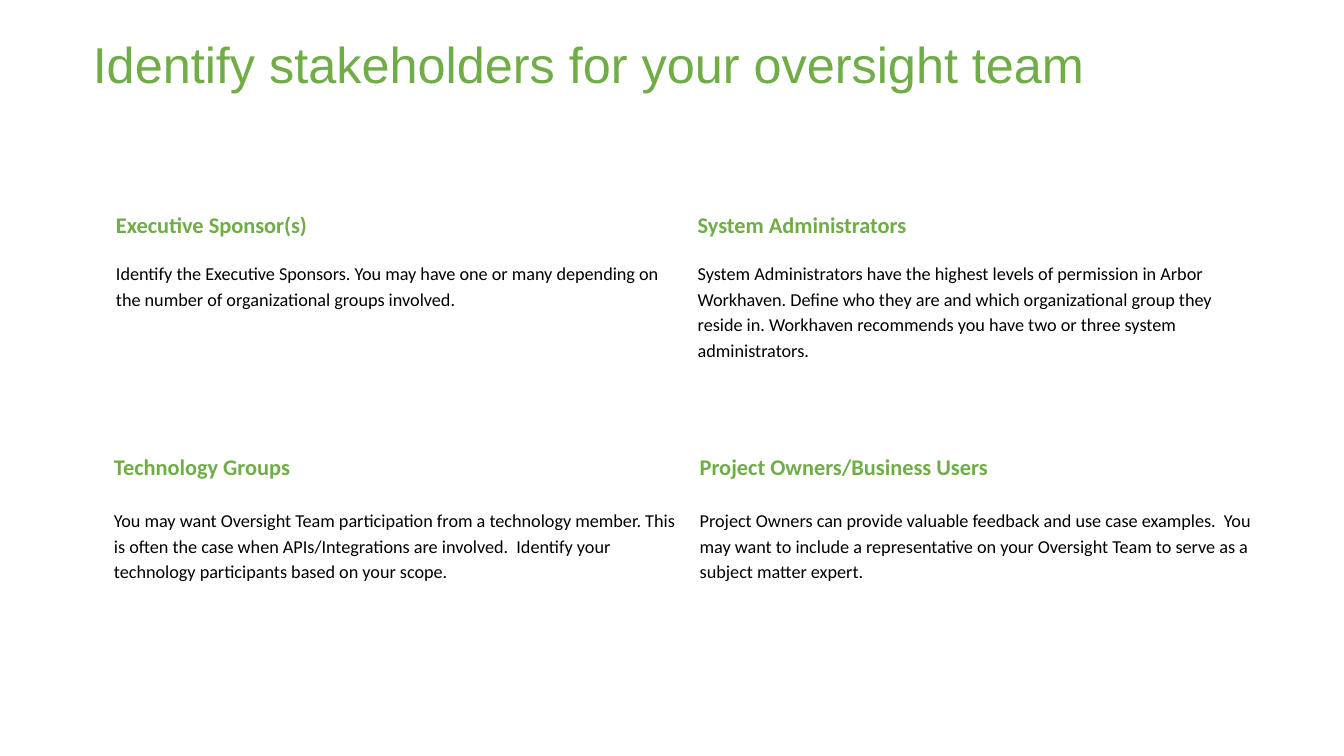
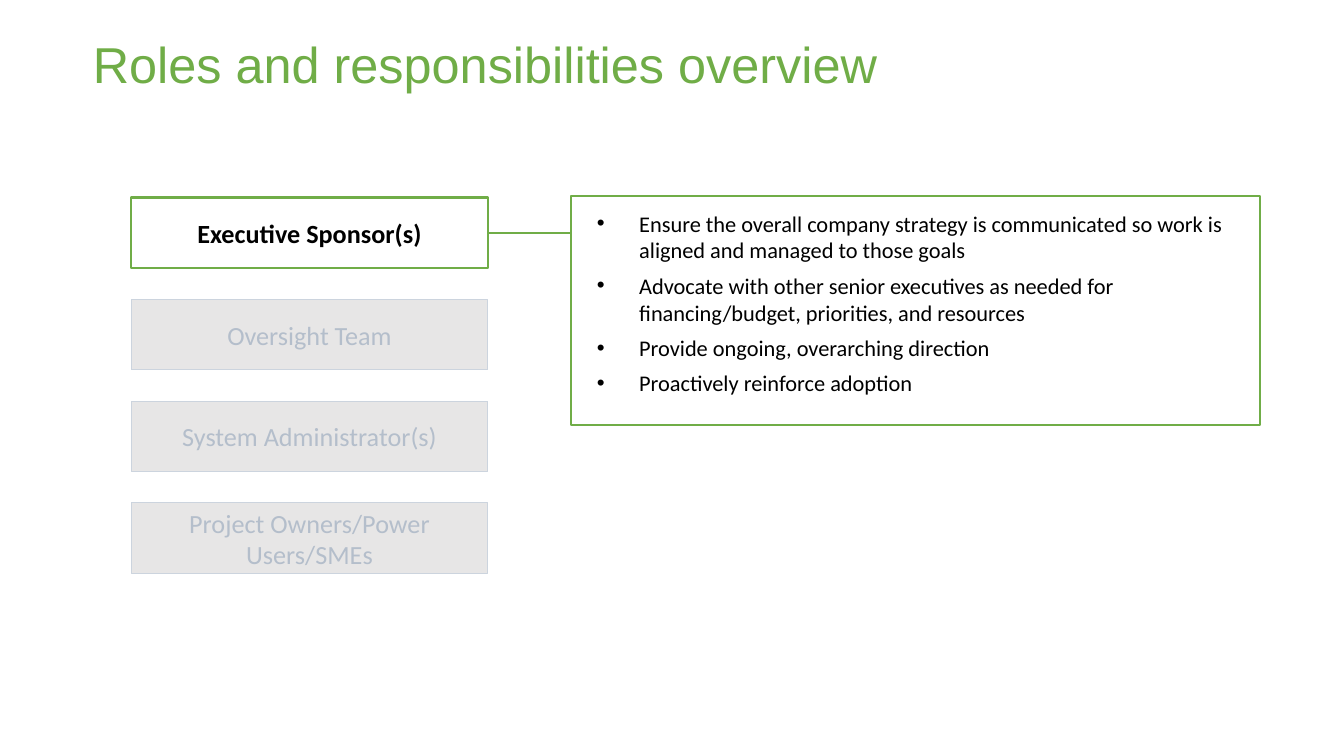
from dataclasses import dataclass

from lxml import etree
from pptx import Presentation
from pptx.dml.color import RGBColor
from pptx.enum.shapes import MSO_CONNECTOR, MSO_SHAPE
from pptx.enum.text import MSO_ANCHOR, MSO_AUTO_SIZE, PP_ALIGN
from pptx.oxml.ns import qn
from pptx.util import Inches, Pt

RECT = MSO_SHAPE.RECTANGLE
LINE = MSO_CONNECTOR.STRAIGHT
TOP, MIDDLE = MSO_ANCHOR.TOP, MSO_ANCHOR.MIDDLE
LEFT, CENTER = PP_ALIGN.LEFT, PP_ALIGN.CENTER
FIXED = MSO_AUTO_SIZE.NONE


@dataclass(frozen=True)
class Theme:
    green: RGBColor = RGBColor.from_string("70AD47")
    black: RGBColor = RGBColor.from_string("000000")
    white: RGBColor = RGBColor.from_string("FFFFFF")
    gray: RGBColor = RGBColor.from_string("E7E6E6")
    edge: RGBColor = RGBColor.from_string("CCD4DE")
    mute: RGBColor = RGBColor.from_string("B4BECB")
    head: str = "Arial"
    body: str = "Calibri"
    title: Pt = Pt(36)
    role: Pt = Pt(18.7)
    label: Pt = Pt(16)
    text: Pt = Pt(13)
    bold: Pt = Pt(1.5)
    thin: Pt = Pt(0.75)


theme = Theme()


def style(para, face, size, color, bold=False):
    para.font.name = face
    para.font.size = size
    para.font.color.rgb = color
    para.font.bold = bold


def start(layout, text):
    slide = deck.slides.add_slide(deck.slide_layouts[layout])
    title = slide.shapes.title
    title.left, title.top = Inches(0.92), Inches(0.4)
    title.width, title.height = Inches(11.5), Inches(1.45)
    frame = title.text_frame
    frame.text = text
    frame.auto_size = FIXED
    frame.vertical_anchor = TOP
    frame.margin_left = frame.margin_right = 0
    frame.margin_top = frame.margin_bottom = 0
    para = frame.paragraphs[0]
    para.alignment = LEFT
    para.line_spacing = 0.9
    style(para, theme.head, theme.title, theme.green)
    return slide


deck = Presentation()
deck.slide_width, deck.slide_height = Inches(13.33), Inches(7.5)

slide = start(5, "Identify stakeholders for your oversight team")
tables = [
    (1.05, 2, (5.77, 5.6), (0.48, 1.77), (
        ("Executive Sponsor(s)", "System Administrators"),
        ("Identify the Executive Sponsors. You may have one or many depending "
         "on the number of organizational groups involved.",
         "System Administrators have the highest levels of permission in Arbor "
         "Workhaven. Define who they are and which organizational group they "
         "reside in. Workhaven recommends you have two or three system "
         "administrators."))),
    (1.03, 4.41, (5.81, 5.69), (0.52, 1.88), (
        ("Technology Groups", "Project Owners/Business Users"),
        ("You may want Oversight Team participation from a technology member. "
         "This is often the case when APIs/Integrations are involved.  "
         "Identify your technology participants based on your scope.",
         "Project Owners can provide valuable feedback and use case "
         "examples.  You may want to include a representative on your "
         "Oversight Team to serve as a subject matter expert."))),
]
for left, top, widths, heights, rows in tables:
    table = slide.shapes.add_table(
        2, 2, Inches(left), Inches(top),
        Inches(sum(widths)), Inches(sum(heights))).table
    table.first_row = table.horz_banding = False
    for col, width in zip(table.columns, widths):
        col.width = Inches(width)
    for r, (height, texts) in enumerate(zip(heights, rows)):
        table.rows[r].height = Inches(height)
        for c, text in enumerate(texts):
            cell = table.cell(r, c)
            cell.fill.background()
            cell.margin_left = cell.margin_top = cell.margin_bottom = Inches(0.1)
            cell.margin_right = Inches(0.13)
            cell.text = text
            para = cell.text_frame.paragraphs[0]
            if r == 0:
                style(para, theme.body, theme.label, theme.green, True)
            else:
                para.line_spacing = 1.15
                style(para, theme.body, theme.text, theme.black)

slide = start(1, "Roles and responsibilities overview")
roles = ["Executive Sponsor(s)", "Oversight Team", "System Administrator(s)",
         "Project Owners/Power Users/SMEs"]
pad = Inches(0.13)
for i, role in enumerate(roles):
    live = i == 0
    box = slide.shapes.add_shape(
        RECT, Inches(1.3), Inches(1.96 + i * 1.01), Inches(3.54), Inches(0.7))
    box.shadow.inherit = False
    box.fill.solid()
    box.fill.fore_color.rgb = theme.white if live else theme.gray
    box.line.color.rgb = theme.green if live else theme.edge
    box.line.width = theme.bold if live else theme.thin
    frame = box.text_frame
    frame.word_wrap = True
    frame.vertical_anchor = MIDDLE
    frame.margin_left = frame.margin_right = pad
    frame.margin_top = frame.margin_bottom = pad
    frame.text = role
    para = frame.paragraphs[0]
    para.alignment = CENTER
    style(para, theme.body, theme.role, theme.black if live else theme.mute, live)

duties = [
    "Ensure the overall company strategy is communicated so work is aligned "
    "and managed to those goals",
    "Advocate with other senior executives as needed for financing/budget, "
    "priorities, and resources",
    "Provide ongoing, overarching direction",
    "Proactively reinforce adoption",
]
panel = slide.placeholders[1]
panel.left, panel.top = Inches(5.66), Inches(1.94)
panel.width, panel.height = Inches(6.84), Inches(2.28)
panel.fill.solid()
panel.fill.fore_color.rgb = theme.white
panel.line.color.rgb = theme.green
panel.line.width = theme.bold
frame = panel.text_frame
frame.auto_size = FIXED
frame.vertical_anchor = TOP
frame.margin_left, frame.margin_right = Inches(0.26), Inches(0.3)
frame.margin_top = frame.margin_bottom = Inches(0.14)
frame.text = "\n".join(duties)
for para in frame.paragraphs:
    para.space_before, para.space_after = Pt(0), Pt(6)
    props = para._p.get_or_add_pPr()
    props.set("marL", str(Inches(0.42)))
    props.set("indent", str(-Inches(0.42)))
    etree.SubElement(props, qn("a:buFont")).set("typeface", theme.head)
    etree.SubElement(props, qn("a:buChar")).set("char", "•")
    style(para, theme.body, theme.label, theme.black)

link = slide.shapes.add_connector(
    LINE, Inches(4.84), Inches(2.31), Inches(5.66), Inches(2.31))
link.line.color.rgb = theme.green
link.line.width = theme.bold
etree.SubElement(link._element.spPr, qn("a:effectLst"))

deck.save("out.pptx")
